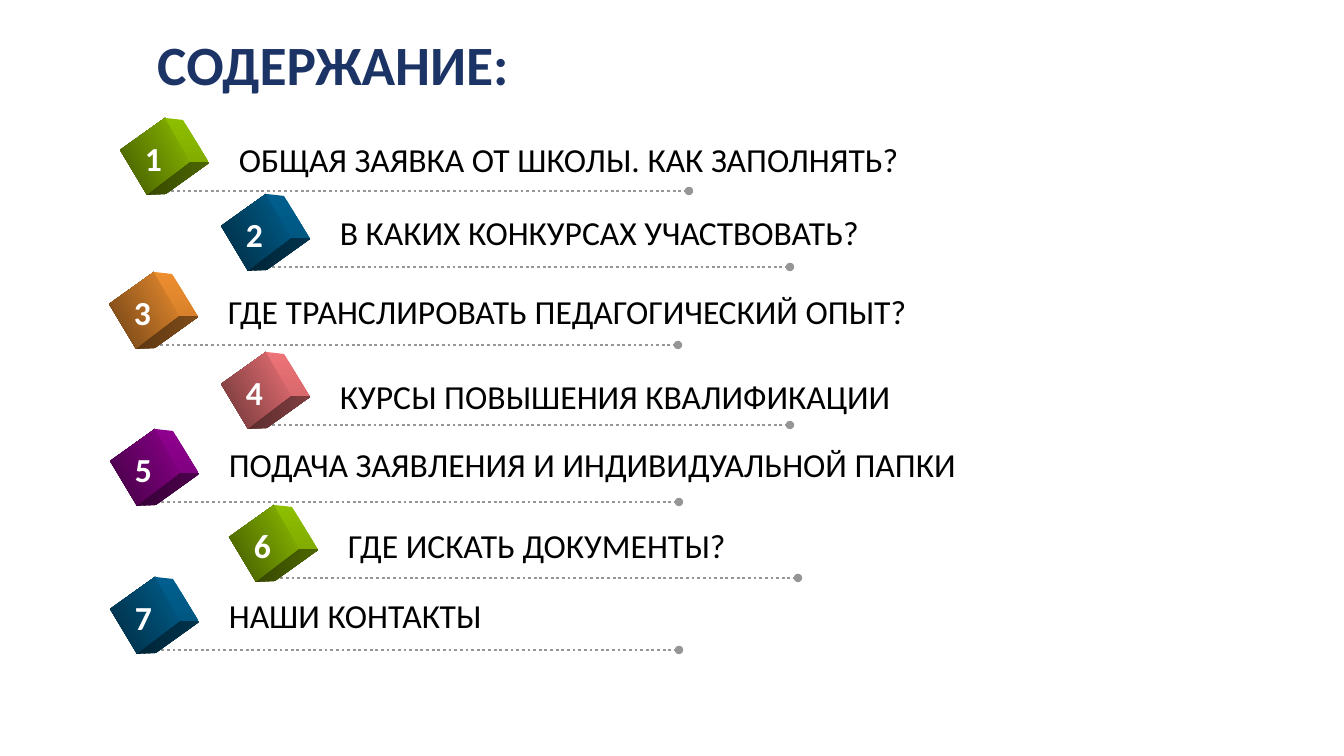
from pptx import Presentation
from pptx.dml.color import RGBColor
from pptx.enum.dml import MSO_LINE
from pptx.enum.shapes import MSO_CONNECTOR
from pptx.enum.text import MSO_ANCHOR, PP_ALIGN
from pptx.oxml.ns import qn
from pptx.util import Emu, Pt
from lxml.etree import SubElement

NAVY = RGBColor(0x1C, 0x33, 0x65)
BLACK = RGBColor(0, 0, 0)
WHITE = RGBColor(0xFF, 0xFF, 0xFF)
GREY = RGBColor(0x96, 0x96, 0x96)
LIME = RGBColor(0x99, 0xCC, 0x00)
BLUE = RGBColor(0x00, 0x66, 0x99)
ORANGE = RGBColor(0xFF, 0x99, 0x33)
PINK = RGBColor(0xFF, 0x7C, 0x80)
PURPLE = RGBColor(0x99, 0x00, 0x99)

FRONT = [(-40, -41), (5, -73), (31, -29), (-13, 4)]
SIDE = [(5, -73), (23, -71), (49, -28), (31, -29)]
BASE = [(-13, 4), (31, -29), (49, -28), (6, 3)]

ITEMS = [
    (160, 191, 134, 686, LIME, "ОБЩАЯ ЗАЯВКА ОТ ШКОЛЫ. КАК ЗАПОЛНЯТЬ?"),
    (261, 267, 207, 544, BLUE, "В КАКИХ КОНКУРСАХ УЧАСТВОВАТЬ?"),
    (149, 345, 286, 706, ORANGE, "ГДЕ ТРАНСЛИРОВАТЬ ПЕДАГОГИЧЕСКИЙ ОПЫТ?"),
    (261, 425, 371, 584, PINK, "КУРСЫ ПОВЫШЕНИЯ КВАЛИФИКАЦИИ"),
    (150, 502, 439, 764, PURPLE, "ПОДАЧА ЗАЯВЛЕНИЯ И ИНДИВИДУАЛЬНОЙ ПАПКИ"),
    (269, 578, 520, 402, LIME, "ГДЕ ИСКАТЬ ДОКУМЕНТЫ?"),
    (150, 650, 590, 275, BLUE, "НАШИ КОНТАКТЫ"),
]


def px(num):
    return Emu(round(num * 914400 / 100.8))


def shade(color, part):
    return RGBColor(*(round(tone * part) for tone in color))


def write(frame, words, size=24, color=BLACK, bold=False, anchor=MSO_ANCHOR.TOP, space=1.0):
    frame.word_wrap = True
    frame.vertical_anchor = anchor
    para = frame.paragraphs[0]
    para.alignment = PP_ALIGN.LEFT
    para.line_spacing = space
    run = para.add_run()
    run.text = words
    run.font.name = "Calibri"
    run.font.size = Pt(size)
    run.font.bold = bold
    run.font.color.rgb = color


class Deck:
    def __init__(self):
        self.show = Presentation()
        self.show.slide_width = px(1344)
        self.show.slide_height = px(756)
        self.slide = self.show.slides.add_slide(self.show.slide_layouts[5])

    def title(self, words, left, top, width, height):
        head = self.slide.shapes.title
        head.left, head.top = px(left), px(top)
        head.width, head.height = px(width), px(height)
        write(head.text_frame, words, size=39.6, color=NAVY, bold=True,
              anchor=MSO_ANCHOR.MIDDLE, space=0.9)

    def label(self, group, words, left, top, width, **style):
        box = group.shapes.add_textbox(px(left), px(top), px(width), px(51))
        write(box.text_frame, words, **style)

    def rule(self, group, left, top, width):
        line = group.shapes.add_connector(
            MSO_CONNECTOR.STRAIGHT, px(left), px(top), px(left + width), px(top))
        line.line.color.rgb = GREY
        line.line.width = Pt(2)
        line.line.dash_style = MSO_LINE.ROUND_DOT
        SubElement(line.line._get_or_add_ln(), qn("a:tailEnd"), type="oval")
        SubElement(line._element.spPr, qn("a:effectLst"))

    def face(self, group, left, top, points, start, end, angle):
        spots = [(px(left + x), px(top + y)) for x, y in points]
        pen = group.shapes.build_freeform(*spots[0])
        pen.add_line_segments(spots[1:], close=True)
        shape = pen.convert_to_shape()
        shape.shadow.inherit = False
        shape.line.fill.background()
        shape.fill.gradient()
        shape.fill.gradient_angle = angle
        for stop, color, place in zip(shape.fill.gradient_stops, (start, end), (0, 1)):
            stop.color.rgb = color
            stop.position = place

    def cube(self, group, left, top, color):
        bright = shade(color, 0.93)
        self.face(group, left, top, FRONT, shade(color, 0.42), bright, 30)
        self.face(group, left, top, SIDE, bright, shade(color, 0.85), 270)
        self.face(group, left, top, BASE, shade(color, 0.36), shade(color, 0.5), 0)

    def item(self, num, left, base, top, width, color, words):
        group = self.slide.shapes.add_group_shape()
        self.rule(group, left, base, 529)
        self.cube(group, left, base, color)
        self.label(group, words, left + 69, top, width)
        self.label(group, str(num), left - 25, base - 58, 40, color=WHITE, bold=True)


def main():
    deck = Deck()
    deck.title("СОДЕРЖАНИЕ:", 147, 40, 1051, 56)
    for num, entry in enumerate(ITEMS, 1):
        deck.item(num, *entry)
    deck.show.save("out.pptx")


if __name__ == "__main__":
    main()
